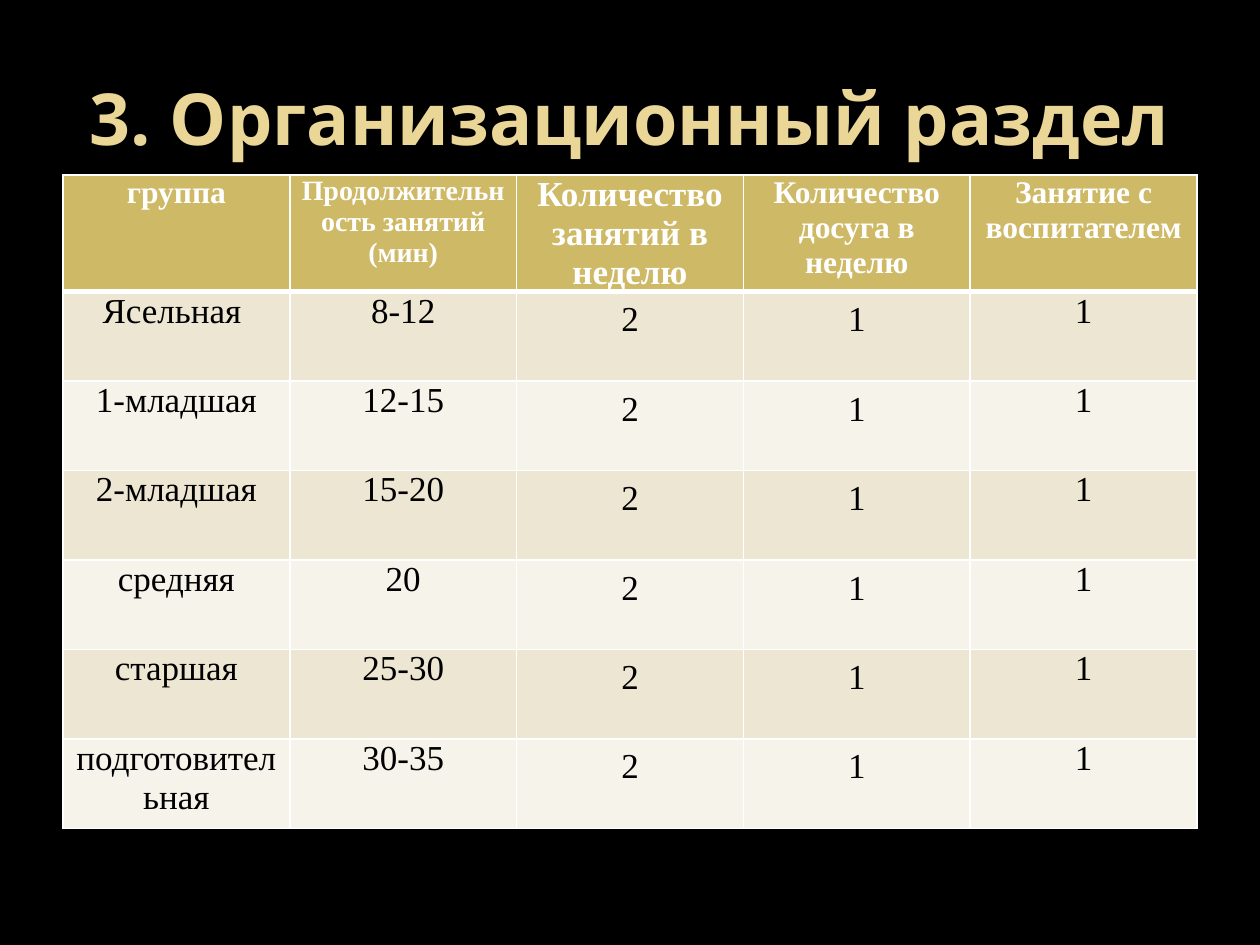
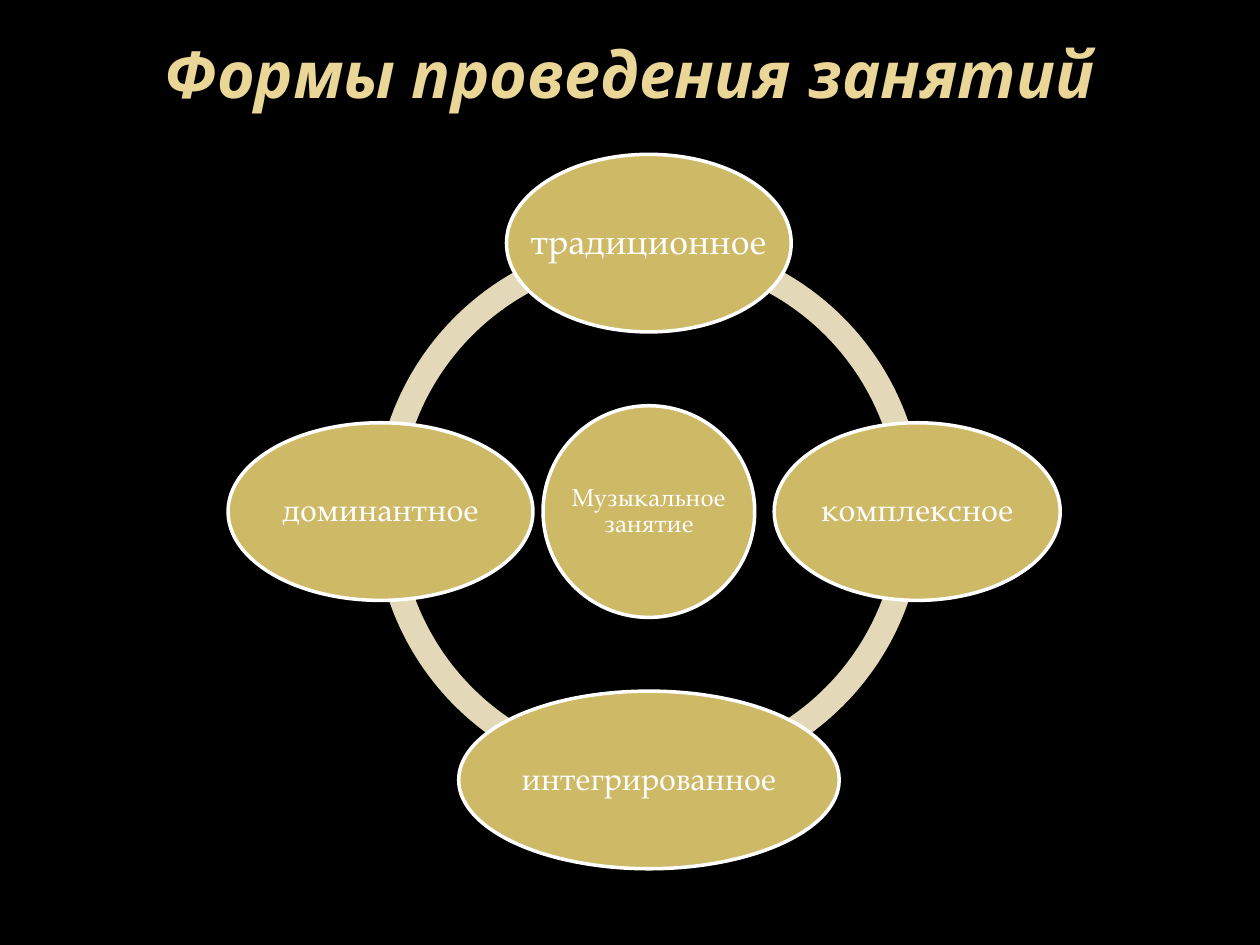
import pptx
import pptx.util
import pptx.dml.color
import pptx.enum.shapes
import pptx.enum.text
import pptx.oxml
import pptx.oxml.ns

Inches = pptx.util.Inches
Pt = pptx.util.Pt
RGBColor = pptx.dml.color.RGBColor
CENTER = pptx.enum.text.PP_ALIGN.CENTER
MIDDLE = pptx.enum.text.MSO_ANCHOR.MIDDLE
SHAPE = pptx.enum.shapes.MSO_SHAPE

# Shared look
BLACK = RGBColor(0x00, 0x00, 0x00)
WHITE = RGBColor(0xFF, 0xFF, 0xFF)
TITLE_GOLD = RGBColor(0xEA, 0xD6, 0x96)
GOLD = RGBColor(0xCE, 0xB9, 0x66)
RING_SAND = RGBColor(0xE3, 0xD9, 0xB8)
BAND_COLORS = (RGBColor(0xED, 0xE6, 0xD3), RGBColor(0xF6, 0xF3, 0xEA))
TITLE_FONT = "Noto Sans"
TABLE_FONT = "Times New Roman"
CYCLE_FONT = "TeX Gyre Pagella"

# Timetable: header text and size, then one row per group
SCHEDULE_TITLE = "3. Организационный раздел"
HEADERS = [
    ("группа", 18),
    ("Продолжительность занятий (мин)", 16),
    ("Количество занятий в неделю", 20),
    ("Количество досуга в неделю", 18),
    ("Занятие с воспитателем", 18),
]
GROUPS = [
    ("Ясельная ", "8-12", "2", "1", "1"),
    ("1-младшая", "12-15", "2", "1", "1"),
    ("2-младшая", "15-20", "2", "1", "1"),
    ("средняя", "20", "2", "1", "1"),
    ("старшая", "25-30", "2", "1", "1"),
    ("подготовительная", "30-35", "2", "1", "1"),
]
LOWERED_COLUMNS = (2, 3)
LOWERED_LINE = 13.6
COLUMN_WIDTH, ROW_HEIGHT = 1.8, 0.71

# Lesson cycle: text, direction from the centre, width, height, text size
FORMS_TITLE = "Формы проведения занятий"
CYCLE_CENTER = (5.15, 4.06)
ORBIT = 2.13
RING_SIZE, RING_THICKNESS = 4.36, 0.046
FORMS = [
    ("Музыкальное\vзанятие", (0, 0), 1.68, 1.68, 14),
    ("традиционное", (0, -1), 2.26, 1.41, 20),
    ("комплексное", (1, 0), 2.27, 1.41, 18),
    ("интегрированное", (0, 1), 3.02, 1.41, 18),
    ("доминантное", (-1, 0), 2.42, 1.41, 18),
]


def style_paragraph(para, font_name, size, color, bold=False, italic=False):
    para.alignment = CENTER
    para.font.name = font_name
    para.font.size = Pt(size)
    para.font.color.rgb = color
    para.font.bold = bold
    para.font.italic = italic


def add_titled_slide(deck, text, size, italic=False, bottom_inset=0.05):
    slide = deck.slides.add_slide(deck.slide_layouts[5])
    title = slide.shapes.title
    title.left, title.top = Inches(0.5), Inches(0.3)
    title.width, title.height = Inches(9), Inches(1.25)
    frame = title.text_frame
    frame.text = text
    frame.auto_size = pptx.enum.text.MSO_AUTO_SIZE.NONE
    frame.vertical_anchor = MIDDLE
    frame.margin_bottom = Inches(bottom_inset)
    style_paragraph(frame.paragraphs[0], TITLE_FONT, size, TITLE_GOLD, True, italic)
    return slide


def set_borders(cell, widths):
    properties = cell._tc.get_or_add_tcPr()
    for side, width in zip("LRTB", widths):
        properties.append(pptx.oxml.parse_xml(
            f'<a:ln{side} {pptx.oxml.ns.nsdecls("a")} w="{Pt(width)}">'
            f'<a:solidFill><a:srgbClr val="{WHITE}"/></a:solidFill></a:ln{side}>'
        ))


def fill_cell(cell, text, size, color, fill, border_widths, bold=False):
    set_borders(cell, border_widths)
    cell.fill.solid()
    cell.fill.fore_color.rgb = fill
    cell.margin_left = cell.margin_right = Inches(0.07)
    cell.margin_top = cell.margin_bottom = 0
    cell.text = text
    para = cell.text_frame.paragraphs[0]
    style_paragraph(para, TABLE_FONT, size, color, bold)
    return para


def add_schedule(slide):
    columns, rows = len(HEADERS), len(GROUPS) + 1
    table = slide.shapes.add_table(
        rows, columns, Inches(0.5), Inches(1.39),
        Inches(COLUMN_WIDTH * columns), Inches(ROW_HEIGHT * rows),
    ).table
    for column in table.columns:
        column.width = Inches(COLUMN_WIDTH)
    for row in table.rows:
        row.height = Inches(ROW_HEIGHT)

    # Header row
    for column, (text, size) in enumerate(HEADERS):
        para = fill_cell(table.cell(0, column), text, size, WHITE, GOLD, (1, 1, 1, 3), True)
        para.space_after = Pt(6)

    # Group rows in alternating bands
    for row, values in enumerate(GROUPS, start=1):
        borders = (1, 1, 3 if row == 1 else 1, 1)
        for column, text in enumerate(values):
            cell = table.cell(row, column)
            para = fill_cell(cell, text, 20, BLACK, BAND_COLORS[(row - 1) % 2], borders)
            if column in LOWERED_COLUMNS:
                cell.margin_top = Pt(LOWERED_LINE)
                para.line_spacing = Pt(LOWERED_LINE)
            else:
                para.space_after = Pt(6)


def add_centered_shape(slide, kind, center, width, height, fill):
    shape = slide.shapes.add_shape(
        kind, Inches(center[0] - width / 2), Inches(center[1] - height / 2),
        Inches(width), Inches(height),
    )
    shape.shadow.inherit = False
    shape.fill.solid()
    shape.fill.fore_color.rgb = fill
    return shape


def add_cycle(slide):
    # Ring of four quarter arcs; an adjustment of 0.6 is one degree
    for start in (180, 90, 0, 270):
        arc = add_centered_shape(
            slide, SHAPE.BLOCK_ARC, CYCLE_CENTER, RING_SIZE, RING_SIZE, RING_SAND)
        arc.line.fill.background()
        arc.adjustments[0] = start * 0.6
        arc.adjustments[1] = (start + 90) % 360 * 0.6
        arc.adjustments[2] = RING_THICKNESS

    # Centre and the four forms around it
    for text, direction, width, height, size in FORMS:
        center = [middle + ORBIT * step for middle, step in zip(CYCLE_CENTER, direction)]
        oval = add_centered_shape(slide, SHAPE.OVAL, center, width, height, GOLD)
        oval.line.color.rgb = WHITE
        oval.line.width = Pt(2)
        frame = oval.text_frame
        frame.text = text
        frame.word_wrap = False
        frame.vertical_anchor = MIDDLE
        frame.margin_left = frame.margin_right = Inches(0.03)
        frame.margin_top = frame.margin_bottom = Inches(0.03)
        para = frame.paragraphs[0]
        style_paragraph(para, CYCLE_FONT, size, WHITE)
        para.line_spacing = 0.9


def main():
    deck = pptx.Presentation()
    deck.slide_width, deck.slide_height = Inches(10), Inches(7.5)
    background = deck.slide_master.background.fill
    background.solid()
    background.fore_color.rgb = BLACK

    add_schedule(add_titled_slide(deck, SCHEDULE_TITLE, 41))
    add_cycle(add_titled_slide(deck, FORMS_TITLE, 36.9, italic=True, bottom_inset=0.75))
    deck.save("out.pptx")


if __name__ == "__main__":
    main()
